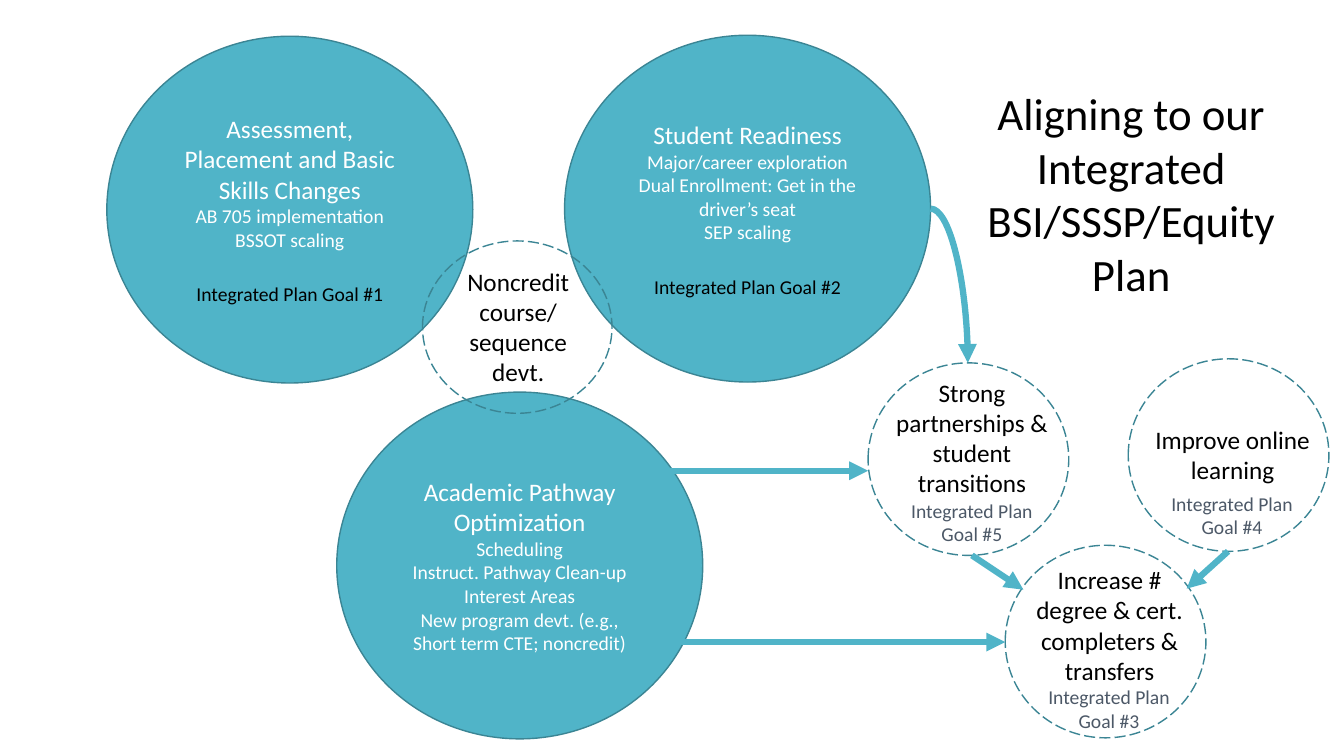
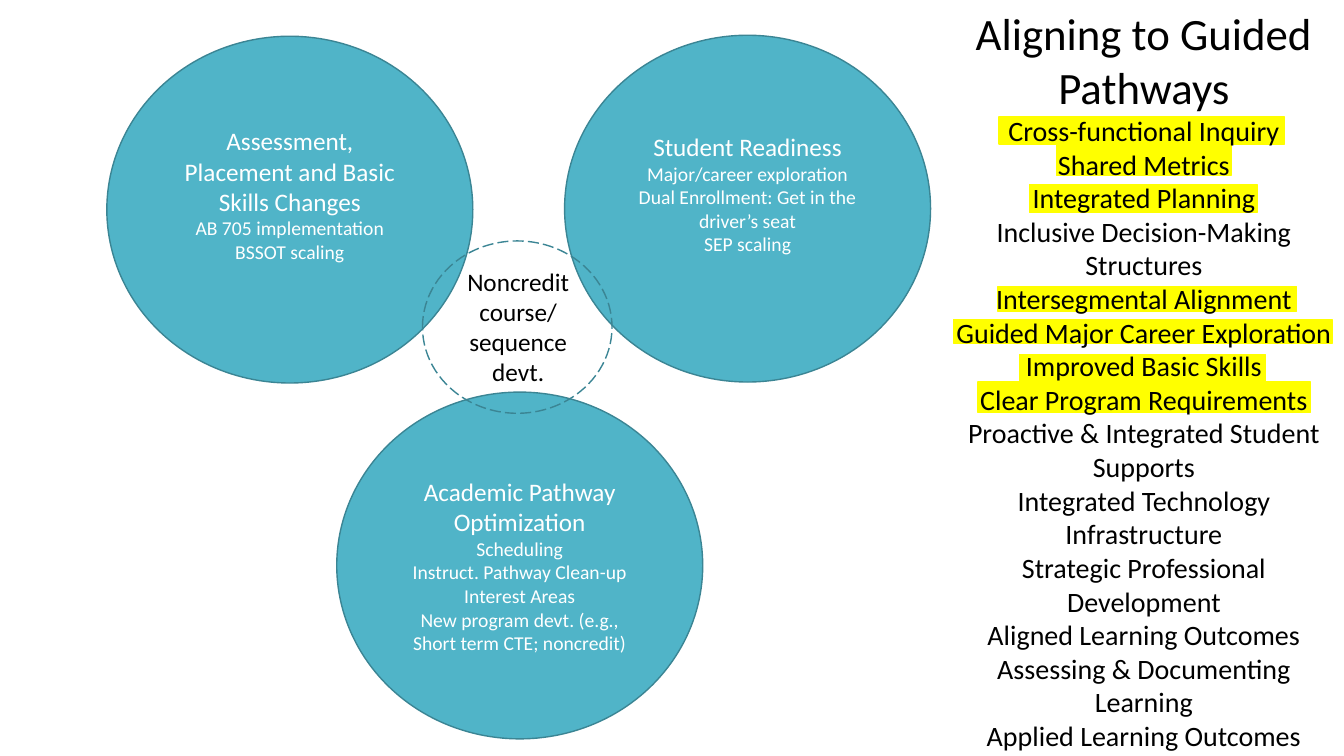
from dataclasses import dataclass

from lxml.etree import SubElement
from pptx import Presentation
from pptx.dml.color import RGBColor
from pptx.enum.dml import MSO_LINE as Dash
from pptx.enum.shapes import MSO_CONNECTOR as Link, MSO_SHAPE as Form
from pptx.enum.text import MSO_ANCHOR as Anchor, PP_ALIGN as Align
from pptx.oxml.ns import qn
from pptx.shapes.autoshape import Shape
from pptx.slide import Slide
from pptx.text.text import TextFrame
from pptx.util import Inches, Pt

COLORS = {
    "teal": "50B4C8",
    "edge": "3B8594",
    "slate": "4C5867",
    "mark": "FFFF00",
    "white": "FFFFFF",
    "black": "000000",
}
FONT = "Calibri"
TITLE, LIST, HEAD, BODY = 32, 20, 18, 14
GAP = 22
DISC_W, DISC_H = 3.63, 3.44
RING_W, RING_H = 1.99, 1.91


@dataclass(frozen=True)
class Box:
    left: float
    top: float
    width: float
    height: float


@dataclass(frozen=True)
class Para:
    text: str
    size: int = HEAD
    color: str = "black"
    before: int = 0


@dataclass(frozen=True)
class Disc:
    left: float
    top: float
    head: str
    points: tuple[str, ...]
    goal: str = ""


@dataclass(frozen=True)
class Ring:
    left: float
    top: float
    label: Box
    lines: tuple[str, ...]
    goal: str
    goal_top: float


@dataclass(frozen=True)
class Arrow:
    x1: float
    y1: float
    x2: float
    y2: float
    curved: bool = False


DISCS = (
    Disc(1.06, 0.36, "Assessment, Placement and Basic Skills Changes",
         ("AB 705 implementation", "BSSOT scaling"), "Integrated Plan Goal #1"),
    Disc(5.6, 0.35, "Student Readiness",
         ("Major/career exploration", "Dual Enrollment: Get in the driver’s seat",
          "SEP scaling"), "Integrated Plan Goal #2"),
    Disc(3.34, 3.89, "Academic Pathway Optimization",
         ("Scheduling", "Instruct. Pathway Clean-up", "Interest Areas",
          "New program devt. (e.g., Short term CTE; noncredit)")),
)
RINGS = (
    Ring(11.19, 3.56, Box(11.32, 4.16, 1.81, 0.71),
         ("Improve online", "learning"), "Goal #4", 4.83),
    Ring(9.97, 5.41, Box(10.14, 5.55, 1.73, 1.31),
         ("Increase #", "degree & cert.", "completers &", "transfers"), "Goal #3", 6.75),
    Ring(8.61, 3.6, Box(8.67, 3.69, 1.94, 1.31),
         ("Strong partnerships & student transitions",), "Goal #5", 4.9),
)
ARROWS = (
    Arrow(6.64, 4.67, 8.61, 4.67),
    Arrow(9.23, 2.07, 9.6, 3.6, curved=True),
    Arrow(6.75, 6.37, 9.97, 6.37),
    Arrow(9.64, 5.51, 10.15, 5.85),
    Arrow(12.18, 5.47, 11.77, 5.84),
)
MARKS = (
    Box(9.7, 3.79, 3.3, 0.3),
    Box(10.11, 3.52, 2.44, 0.27),
    Box(9.46, 3.17, 3.75, 0.24),
    Box(9.9, 2.84, 2.96, 0.25),
    Box(10.21, 1.83, 2.26, 0.28),
    Box(10.48, 1.44, 1.73, 0.3),
    Box(9.91, 1.16, 2.83, 0.27),
)
THEMES = (
    "Cross-functional Inquiry",
    "Shared Metrics",
    "Integrated Planning",
    "Inclusive Decision-Making Structures",
    "Intersegmental Alignment",
    "Guided Major Career Exploration",
    "Improved Basic Skills",
    "Clear Program Requirements",
    "Proactive & Integrated Student Supports",
    "Integrated Technology Infrastructure",
    "Strategic Professional Development",
    "Aligned Learning Outcomes",
    "Assessing & Documenting Learning",
    "Applied Learning Outcomes",
)


def rgb(name: str) -> RGBColor:
    return RGBColor.from_string(COLORS[name])


def place(box: Box) -> tuple[Inches, ...]:
    return tuple(Inches(n) for n in (box.left, box.top, box.width, box.height))


def write(frame: TextFrame, paras: list[Para]) -> None:
    frame.word_wrap = True
    frame.text = "\n".join(para.text for para in paras)
    for line, para in zip(frame.paragraphs, paras):
        line.alignment = Align.CENTER
        line.space_before = Pt(para.before)
        for run in line.runs:
            run.font.name = FONT
            run.font.size = Pt(para.size)
            run.font.color.rgb = rgb(para.color)


def add_text(slide: Slide, box: Box, paras: list[Para]) -> None:
    write(slide.shapes.add_textbox(*place(box)).text_frame, paras)


def add_form(slide: Slide, form: Form, box: Box, edge: str, fill: str = "") -> Shape:
    shape = slide.shapes.add_shape(form, *place(box))
    shape.shadow.inherit = False
    shape.line.color.rgb = rgb(edge)
    shape.line.width = Pt(1)
    if fill:
        shape.fill.solid()
        shape.fill.fore_color.rgb = rgb(fill)
    else:
        shape.fill.background()
    return shape


def add_dashed(slide: Slide, box: Box) -> None:
    add_form(slide, Form.OVAL, box, "edge").line.dash_style = Dash.LONG_DASH


def add_disc(slide: Slide, disc: Disc, goals: bool) -> None:
    box = Box(disc.left, disc.top, DISC_W, DISC_H)
    frame = add_form(slide, Form.OVAL, box, "edge", "teal").text_frame
    frame.vertical_anchor = Anchor.MIDDLE
    paras = [Para(disc.head, HEAD, "white")]
    paras += [Para(point, BODY, "white") for point in disc.points]
    if disc.goal and goals:
        paras.append(Para(disc.goal, BODY, before=GAP))
    elif disc.goal:
        frame.margin_bottom = Inches(0.35)
    write(frame, paras)


def add_core(slide: Slide, goals: bool) -> None:
    """Draw the three discs and the ring where they meet."""
    for disc in DISCS:
        add_disc(slide, disc, goals)
    add_dashed(slide, Box(4.19, 2.39, 1.88, 1.71))
    add_text(slide, Box(4.51, 2.59, 1.26, 1.31),
             [Para("Noncredit course/"), Para("sequence devt.")])


def add_ring(slide: Slide, ring: Ring) -> None:
    add_dashed(slide, Box(ring.left, ring.top, RING_W, RING_H))
    add_text(slide, Box(ring.left + 0.3, ring.goal_top, 1.46, 0.57),
             [Para(text, BODY, "slate") for text in ("Integrated Plan", ring.goal)])
    add_text(slide, ring.label, [Para(text) for text in ring.lines])


def add_arrow(slide: Slide, arrow: Arrow) -> None:
    ends = (Inches(n) for n in (arrow.x1, arrow.y1, arrow.x2, arrow.y2))
    kind = Link.CURVE if arrow.curved else Link.STRAIGHT
    link = slide.shapes.add_connector(kind, *ends)
    link.line.color.rgb = rgb("teal")
    link.line.width = Pt(4.5)
    props = link._element.spPr
    if arrow.curved:
        props.find(qn("a:prstGeom")).set("prst", "curvedConnector2")
    SubElement(props.find(qn("a:ln")), qn("a:tailEnd"), type="triangle")
    SubElement(props, qn("a:effectLst"))


def draw_plan(slide: Slide) -> None:
    add_core(slide, goals=True)
    for ring in RINGS:
        add_ring(slide, ring)
    for arrow in ARROWS:
        add_arrow(slide, arrow)
    add_text(slide, Box(9.48, 0.8, 3.48, 2.26),
             [Para("Aligning to our Integrated BSI/SSSP/Equity Plan", TITLE)])


def draw_paths(slide: Slide) -> None:
    for mark in MARKS:
        add_form(slide, Form.RECTANGLE, mark, "mark", "mark")
    add_core(slide, goals=False)
    add_text(slide, Box(9.35, 0.01, 3.99, 7.57),
             [Para("Aligning to Guided Pathways", TITLE)]
             + [Para(theme, LIST) for theme in THEMES])


def main() -> None:
    deck = Presentation()
    deck.slide_width, deck.slide_height = Inches(13.33), Inches(7.5)
    blank = deck.slide_layouts[6]
    for draw in (draw_plan, draw_paths):
        draw(deck.slides.add_slide(blank))
    deck.save("out.pptx")


if __name__ == "__main__":
    main()
